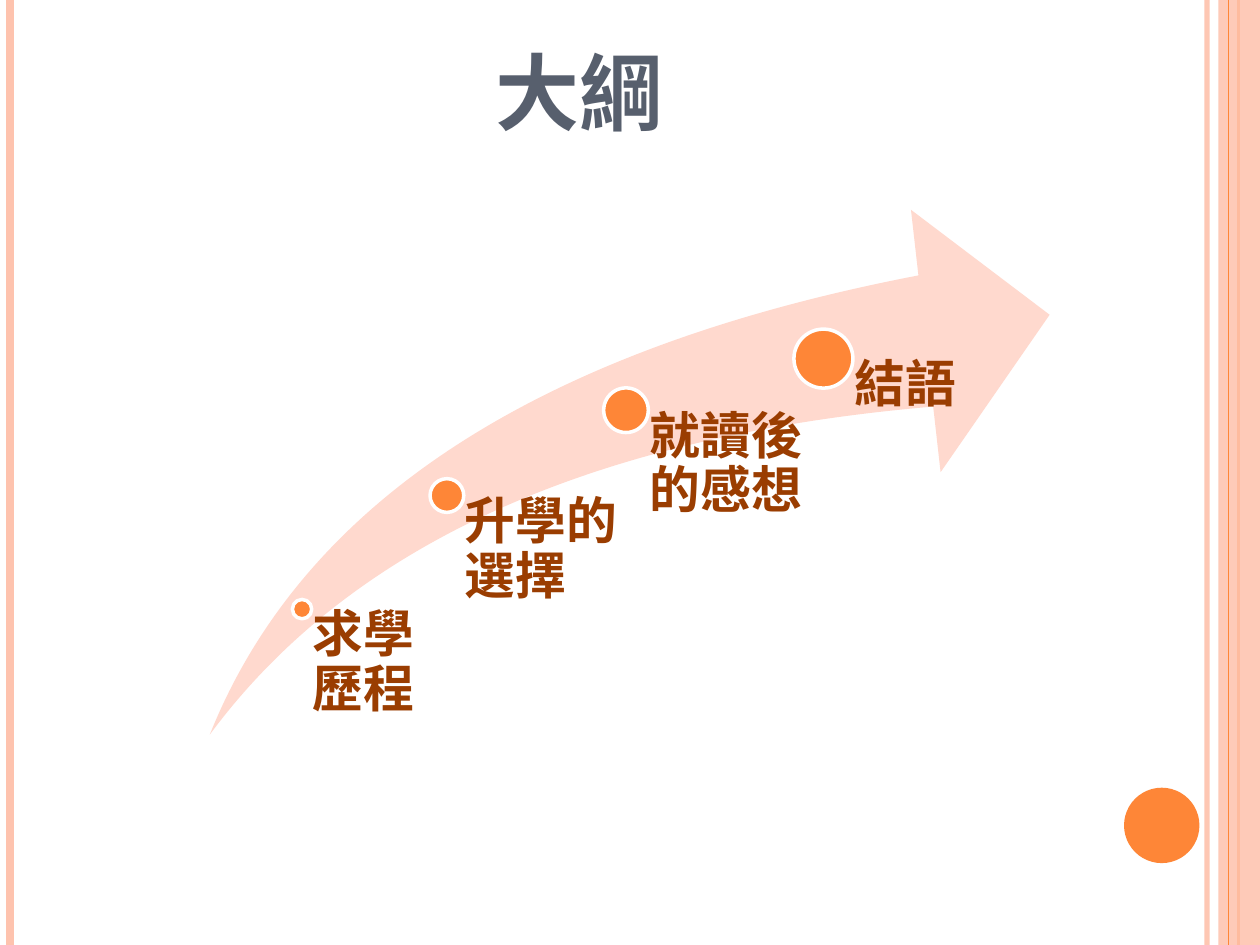
from lxml.etree import SubElement
from pptx import Presentation
from pptx.dml.color import RGBColor
from pptx.enum.shapes import MSO_CONNECTOR, MSO_SHAPE
from pptx.enum.text import MSO_ANCHOR, PP_ALIGN
from pptx.oxml.ns import qn
from pptx.util import Cm, Pt

FONT = "Noto Sans CJK SC"
ORANGE = RGBColor(0xFE, 0x86, 0x37)
PEACH = RGBColor(0xFE, 0xC3, 0xAE)
PALE = RGBColor(0xFF, 0xD9, 0xCE)
BROWN = RGBColor(0x9A, 0x3D, 0x01)
SLATE = RGBColor(0x57, 0x5F, 0x6D)
WHITE = RGBColor(0xFF, 0xFF, 0xFF)
SLIDE_WIDTH, SLIDE_HEIGHT = 25.4, 19.05

RULES_BELOW_BAND = [(24.33, PEACH, 3, 93), (0.2, PEACH, 4.5, 100), (24.97, ORANGE, 1.5, 100)]
RULE_ABOVE_BAND = (24.77, ORANGE, 0.75, 100)
MILESTONES = [("求學歷程", 1.86, 8.05, 0.39, 2.9),
              ("升學的選擇", 4.78, 5.76, 0.68, 3.56),
              ("就讀後的感想", 8.39, 4.04, 0.9, 3.56),
              ("結語", 12.37, 3.0, 1.19, 3.56)]


def set_alpha(shape, percent):
    """Make the first solid colour of a shape or line partly transparent."""
    color = next(shape._element.spPr.iter(qn("a:srgbClr")))
    SubElement(color, qn("a:alpha"), val=str(percent * 1000))


def add_rule(slide, left, top, height, color, width, alpha):
    """Draw a vertical rule."""
    rule = slide.shapes.add_connector(
        MSO_CONNECTOR.STRAIGHT, Cm(left), Cm(top), Cm(left), Cm(top + height))
    rule.line.color.rgb = color
    rule.line.width = Pt(width)
    if alpha < 100:
        set_alpha(rule, alpha)
    SubElement(rule._element.spPr, qn("a:effectLst"))


def add_filled(slide, kind, left, top, width, height, color, outline=None):
    """Draw a flat preset shape with an optional outline colour."""
    shape = slide.shapes.add_shape(kind, Cm(left), Cm(top), Cm(width), Cm(height))
    shape.shadow.inherit = False
    shape.fill.solid()
    shape.fill.fore_color.rgb = color
    if outline is None:
        shape.line.fill.background()
    else:
        shape.line.color.rgb = outline
        shape.line.width = Pt(2)
    return shape


def add_label(slide, left, top, width, height, text, size, color):
    """Add a wrapped text box with one bold paragraph and return both."""
    box = slide.shapes.add_textbox(Cm(left), Cm(top), Cm(width), Cm(height))
    frame = box.text_frame
    frame.word_wrap = True
    paragraph = frame.paragraphs[0]
    paragraph.text = text
    font = paragraph.font
    font.name, font.size, font.bold = FONT, Pt(size), True
    font.color.rgb = color
    SubElement(font._element, qn("a:ea"), typeface=FONT)
    return frame, paragraph


def add_frame(slide, left, top, width, height):
    """Draw the side rules, the right band and the corner disc."""
    for offset, *style in RULES_BELOW_BAND:
        add_rule(slide, left + offset, top, height, *style)
    band = add_filled(slide, MSO_SHAPE.RECTANGLE, left + width - 0.84, top, 0.84, height, PEACH)
    set_alpha(band, 87)
    offset, *style = RULE_ABOVE_BAND
    add_rule(slide, left + offset, top, height, *style)
    add_filled(slide, MSO_SHAPE.OVAL, left + width - 2.74, top + height - 3.17, 1.52, 1.52, ORANGE)


def add_title(slide, left, top, width, height):
    """Add the centred title in small capitals."""
    frame, paragraph = add_label(slide, left, top, width, height, "大綱", 60, SLATE)
    frame.vertical_anchor = MSO_ANCHOR.MIDDLE
    paragraph.alignment = PP_ALIGN.CENTER
    paragraph.font._element.set("cap", "small")


def add_roadmap(slide, left, top, width, height):
    """Draw the rising arrow with its growing dots and labels."""
    arrow = add_filled(slide, MSO_SHAPE.SWOOSH_ARROW, left, top, width, height, PALE)
    arrow.adjustments[0] = arrow.adjustments[1] = 0.25
    for text, across, down, dot, label_width in MILESTONES:
        x, y = left + across, top + down
        add_filled(slide, MSO_SHAPE.OVAL, x - dot / 2, y - dot / 2, dot, dot, ORANGE, WHITE)
        frame, paragraph = add_label(
            slide, x, y, label_width, height - down, text, 29, BROWN)
        frame.margin_left = Cm(dot * 0.53)
        frame.margin_top = frame.margin_right = frame.margin_bottom = 0
        paragraph.line_spacing = 0.9


def main():
    """Build the outline slide and save it."""
    presentation = Presentation()
    presentation.slide_width, presentation.slide_height = Cm(SLIDE_WIDTH), Cm(SLIDE_HEIGHT)
    slide = presentation.slides.add_slide(presentation.slide_layouts[6])
    add_frame(slide, 0, 0, SLIDE_WIDTH, SLIDE_HEIGHT)
    add_title(slide, 1.3, 0.08, 20.75, 3.18)
    add_roadmap(slide, 4.23, 4.23, 16.93, 10.58)
    presentation.save("out.pptx")


if __name__ == "__main__":
    main()
